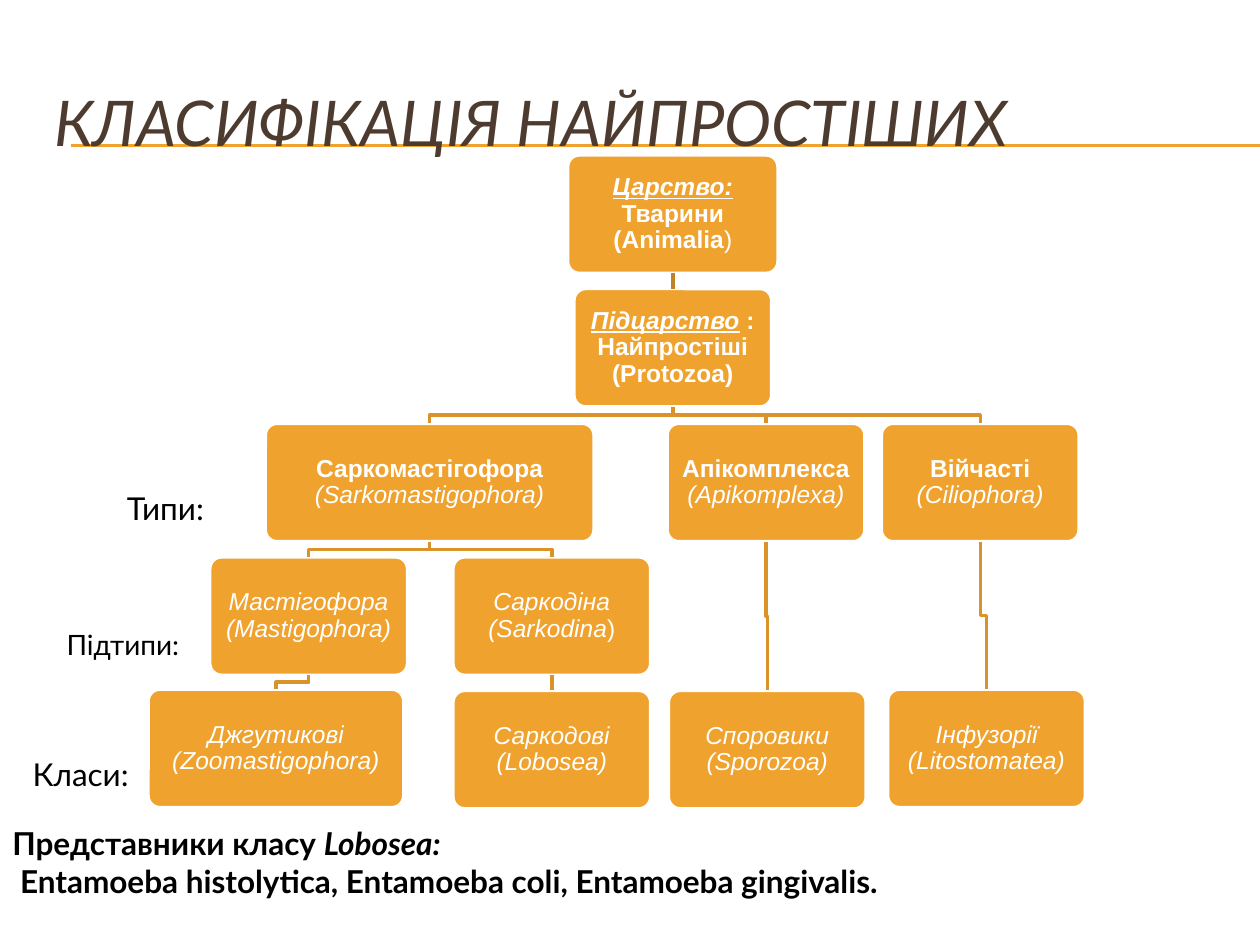
"""Build a slide with the classification tree of the protozoa."""
import pptx
import pptx.dml.color
import pptx.enum.shapes
import pptx.enum.text
import pptx.oxml.ns
import pptx.util
from lxml import etree

Inches, Pt = pptx.util.Inches, pptx.util.Pt
ANCHOR, ALIGN = pptx.enum.text.MSO_ANCHOR, pptx.enum.text.PP_ALIGN

TITLE = "КЛАСИФІКАЦІЯ НАЙПРОСТІШИХ"
ORANGE, BRANCH, TRUNK, WHITE, BROWN, BLACK = "F0A22E", "DA932A", "C08225", "FFFFFF", "4E3B30", "000000"
BOX_HEIGHT = 0.94

# key: (parent, centre x, top, width, [(text, style letters)])
TAXA = {
    "kingdom": (None, 5.34, 1.23, 1.67, [("Царство:", "biu"), (" Тварини (Animalia", "b"), (")", "")]),
    "subkingdom": ("kingdom", 5.34, 2.29, 1.57, [("Підцарство", "biu"), (" : Найпростіші (Protozoa)", "b")]),
    "sarcomastigophora": ("subkingdom", 3.41, 3.36, 2.61, [("Саркомастігофора ", "b"), ("(Sarkomastigophora)", "i")]),
    "apicomplexa": ("subkingdom", 6.08, 3.36, 1.57, [("Апікомплекса ", "b"), ("(Apikomplexa)", "i")]),
    "ciliophora": ("subkingdom", 7.78, 3.36, 1.57, [("Війчасті ", "b"), ("(Ciliophora)", "i")]),
    "mastigophora": ("sarcomastigophora", 2.45, 4.42, 1.57, [("Мастігофора (Mastigophora)", "i")]),
    "sarcodina": ("sarcomastigophora", 4.38, 4.42, 1.57, [("Саркодіна (Sarkodina", "i"), (")", "")]),
    "zoomastigophora": ("mastigophora", 2.19, 5.47, 2.03, [("Джгутикові (Zoomastigophora)", "i")]),
    "lobosea": ("sarcodina", 4.38, 5.48, 1.57, [("Саркодові (Lobosea)", "i")]),
    "sporozoa": ("apicomplexa", 6.09, 5.48, 1.57, [("Споровики (Sporozoa)", "i")]),
    "litostomatea": ("ciliophora", 7.83, 5.47, 1.57, [("Інфузорії (Litostomatea)", "i")]),
}

# left, top, width, height, size, paragraphs
CAPTIONS = [
    (0.91, 3.83, 1.5, 0.4, 18, [[("Типи:", "")]]),
    (0.43, 4.93, 1.1, 0.37, 16, [[("Підтипи:", "")]]),
    (0.16, 5.94, 1.02, 0.4, 18, [[("Класи:", "")]]),
    (0, 6.49, 10.12, 1.01, 18, [
        [("Представники класу ", "b"), ("Lobosea:", "bi")],
        [("\u00a0Entamoeba histolytica, Entamoeba coli, Entamoeba gingivalis.", "b")],
    ]),
]


def rgb(value):
    return pptx.dml.color.RGBColor.from_string(value)


def write(paragraph, runs, size, font, color):
    paragraph.font.size, paragraph.font.name = Pt(size), font
    paragraph.font.color.rgb = rgb(color)
    for text, style in runs:
        run = paragraph.add_run()
        run.text = text
        run.font.size, run.font.name = Pt(size), font
        run.font.color.rgb = rgb(color)
        run.font.bold, run.font.italic, run.font.underline = (letter in style for letter in "biu")


def stroke(shape, color, width):
    shape.line.color.rgb = rgb(color)
    shape.line.width = Pt(width)


def add_line(shapes, start, end, color, width):
    line = shapes.add_connector(pptx.enum.shapes.MSO_CONNECTOR.STRAIGHT, *map(Inches, start + end))
    stroke(line, color, width)
    etree.SubElement(line._element.spPr, pptx.oxml.ns.qn("a:effectLst"))
    return line


def add_taxon(shapes, center, top, width, runs):
    box = shapes.add_shape(pptx.enum.shapes.MSO_SHAPE.ROUNDED_RECTANGLE,
                           Inches(center - width / 2), Inches(top), Inches(width), Inches(BOX_HEIGHT))
    box.adjustments[0] = 0.1
    box.shadow.inherit = False
    box.fill.solid()
    box.fill.fore_color.rgb = rgb(ORANGE)
    stroke(box, WHITE, 2)
    frame = box.text_frame
    frame.word_wrap, frame.vertical_anchor = True, ANCHOR.MIDDLE
    frame.margin_left = frame.margin_right = frame.margin_top = frame.margin_bottom = Inches(0.06)
    paragraph = frame.paragraphs[0]
    paragraph.alignment, paragraph.line_spacing = ALIGN.CENTER, 0.9
    write(paragraph, runs, 14, "Arial", WHITE)
    return box


def add_branch(shapes, boxes, parent, child):
    x1, y1 = TAXA[parent][1], TAXA[parent][2] + BOX_HEIGHT
    x2, y2 = TAXA[child][1:3]
    color = TRUNK if parent == "kingdom" else BRANCH
    if x1 == x2:
        line = add_line(shapes, (x1, y1), (x2, y2), color, 2)
        line.begin_connect(boxes[parent], 2)
        line.end_connect(boxes[child], 0)
        return
    middle = (y1 + y2) / 2
    builder = shapes.build_freeform(Inches(x1), Inches(y1))
    corners = [(x1, middle), (x2, middle), (x2, y2)]
    builder.add_line_segments([(Inches(x), Inches(y)) for x, y in corners], close=False)
    elbow = builder.convert_to_shape()
    elbow.shadow.inherit = False
    elbow.fill.background()
    stroke(elbow, color, 2)


def add_caption(shapes, left, top, width, height, size, paragraphs):
    frame = shapes.add_textbox(*map(Inches, (left, top, width, height))).text_frame
    frame.word_wrap = True
    for index, runs in enumerate(paragraphs):
        paragraph = frame.add_paragraph() if index else frame.paragraphs[0]
        write(paragraph, runs, size, "Lato", BLACK)


def main():
    deck = pptx.Presentation()
    deck.slide_width, deck.slide_height = Inches(10), Inches(7.5)
    slide = deck.slides.add_slide(deck.slide_layouts[5])
    shapes = slide.shapes

    for y in (1.15, 1.16):
        add_line(shapes, (0.56, y), (10, y), ORANGE, 0.75)

    boxes = {}
    for key, (parent, *place) in TAXA.items():
        boxes[key] = add_taxon(shapes, *place)
        if parent:
            add_branch(shapes, boxes, parent, key)

    title = shapes.title
    title.left, title.top, title.width, title.height = map(Inches, (0.33, 0.5, 9.5, 0.92))
    title.text_frame.vertical_anchor = ANCHOR.MIDDLE
    title.text_frame.auto_size = pptx.enum.text.MSO_AUTO_SIZE.NONE
    heading = title.text_frame.paragraphs[0]
    heading.alignment = ALIGN.LEFT
    write(heading, [(TITLE, "i")], 36, "Lato", BROWN)
    shapes._spTree.append(title._element)

    for caption in CAPTIONS:
        add_caption(shapes, *caption)

    deck.save("out.pptx")


if __name__ == "__main__":
    main()
